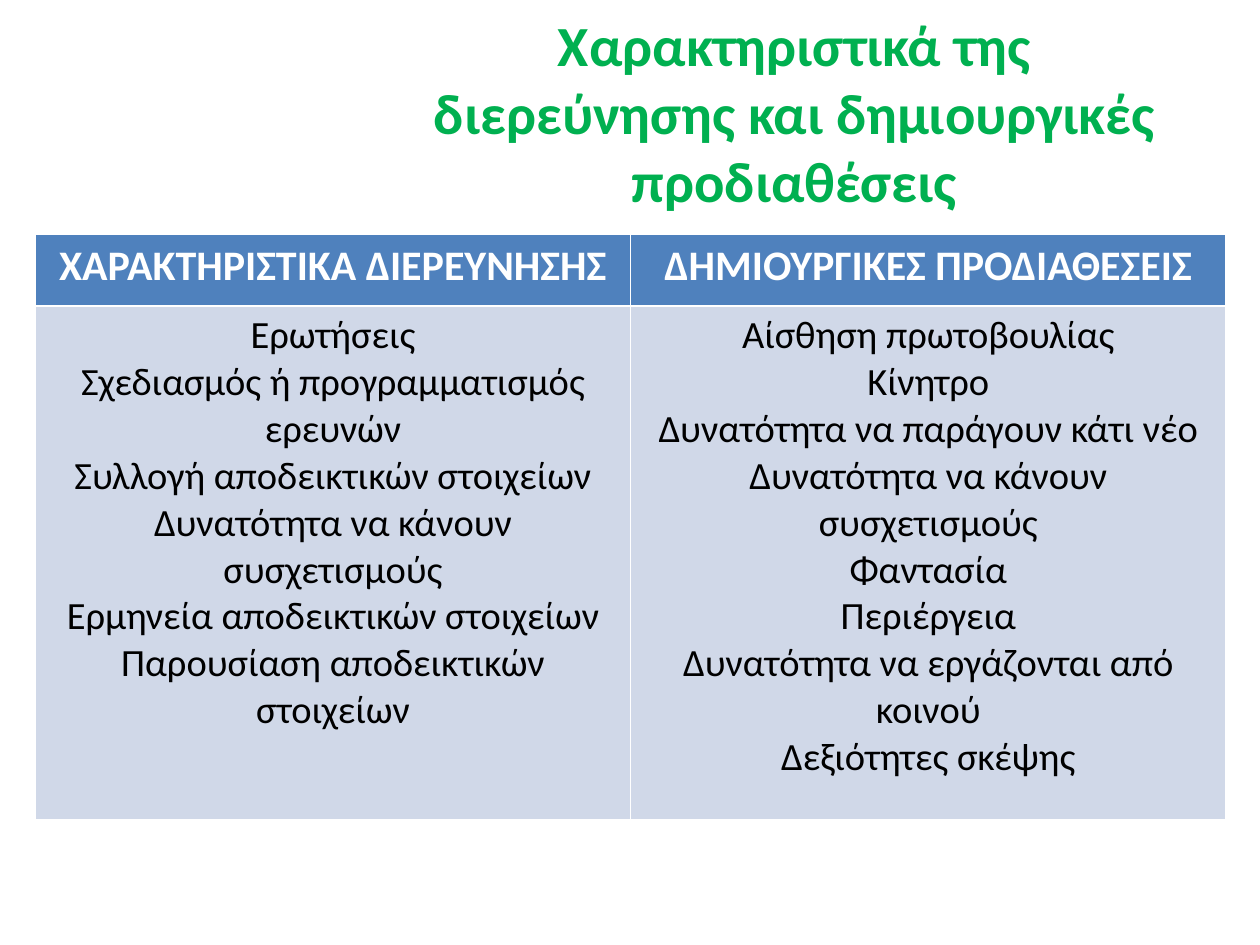
"""Build a slide that pairs traits of inquiry with creative dispositions."""
from dataclasses import dataclass

from pptx import Presentation
from pptx.dml.color import RGBColor
from pptx.enum.text import MSO_ANCHOR, MSO_AUTO_SIZE, PP_ALIGN
from pptx.util import Inches, Pt


@dataclass
class Column:
    head: str
    items: list[str]


TITLE = "Χαρακτηριστικά της διερεύνησης και δημιουργικές προδιαθέσεις"
COLUMNS = [
    Column("ΧΑΡΑΚΤΗΡΙΣΤΙΚΑ ΔΙΕΡΕΥΝΗΣΗΣ", [
        "Ερωτήσεις",
        "Σχεδιασμός ή προγραμματισμός ερευνών",
        "Συλλογή αποδεικτικών στοιχείων",
        "Δυνατότητα να κάνουν συσχετισμούς",
        "Ερμηνεία αποδεικτικών στοιχείων",
        "Παρουσίαση αποδεικτικών στοιχείων",
    ]),
    Column("ΔΗΜΙΟΥΡΓΙΚΕΣ ΠΡΟΔΙΑΘΕΣΕΙΣ", [
        "Αίσθηση πρωτοβουλίας",
        "Κίνητρο",
        "Δυνατότητα να παράγουν κάτι νέο",
        "Δυνατότητα να κάνουν συσχετισμούς",
        "Φαντασία",
        "Περιέργεια",
        "Δυνατότητα να εργάζονται από κοινού",
        "Δεξιότητες σκέψης",
    ]),
]


def paint(target, color: str) -> None:
    target.rgb = RGBColor.from_string(color)


def write(frame, lines: list[str], *, size: float, color: str,
          bold: bool = False) -> None:
    for i, line in enumerate(lines):
        para = frame.paragraphs[0] if i == 0 else frame.add_paragraph()
        para.alignment = PP_ALIGN.CENTER
        run = para.add_run()
        run.text = line
        run.font.name = "Calibri"
        run.font.size = Pt(size)
        run.font.bold = bold
        paint(run.font.color, color)


def fill_cell(cell, lines: list[str], fill: str, **style) -> None:
    cell.fill.solid()
    paint(cell.fill.fore_color, fill)
    write(cell.text_frame, lines, **style)


def add_title(slide) -> None:
    title = slide.shapes.title
    title.left, title.top = Inches(3.11), Inches(0.3)
    title.width, title.height = Inches(6.39), Inches(1.17)
    frame = title.text_frame
    frame.auto_size = MSO_AUTO_SIZE.NONE
    frame.word_wrap = True
    frame.vertical_anchor = MSO_ANCHOR.MIDDLE
    write(frame, [TITLE], size=32.4, color="00B050", bold=True)


def add_grid(slide, columns: list[Column]) -> None:
    table = slide.shapes.add_table(
        2, len(columns), Inches(0.28), Inches(1.86),
        Inches(9.45), Inches(4.65)).table
    table.rows[0].height = Inches(0.57)
    table.rows[1].height = Inches(4.08)
    for i, col in enumerate(columns):
        fill_cell(table.cell(0, i), [col.head], "4F81BD",
                  size=24, color="FFFFFF", bold=True)
        fill_cell(table.cell(1, i), col.items, "D0D8E8",
                  size=22, color="000000")


def main() -> None:
    deck = Presentation()
    deck.slide_width, deck.slide_height = Inches(10), Inches(7.5)
    slide = deck.slides.add_slide(deck.slide_layouts[5])
    add_title(slide)
    add_grid(slide, COLUMNS)
    deck.save("out.pptx")


if __name__ == "__main__":
    main()
